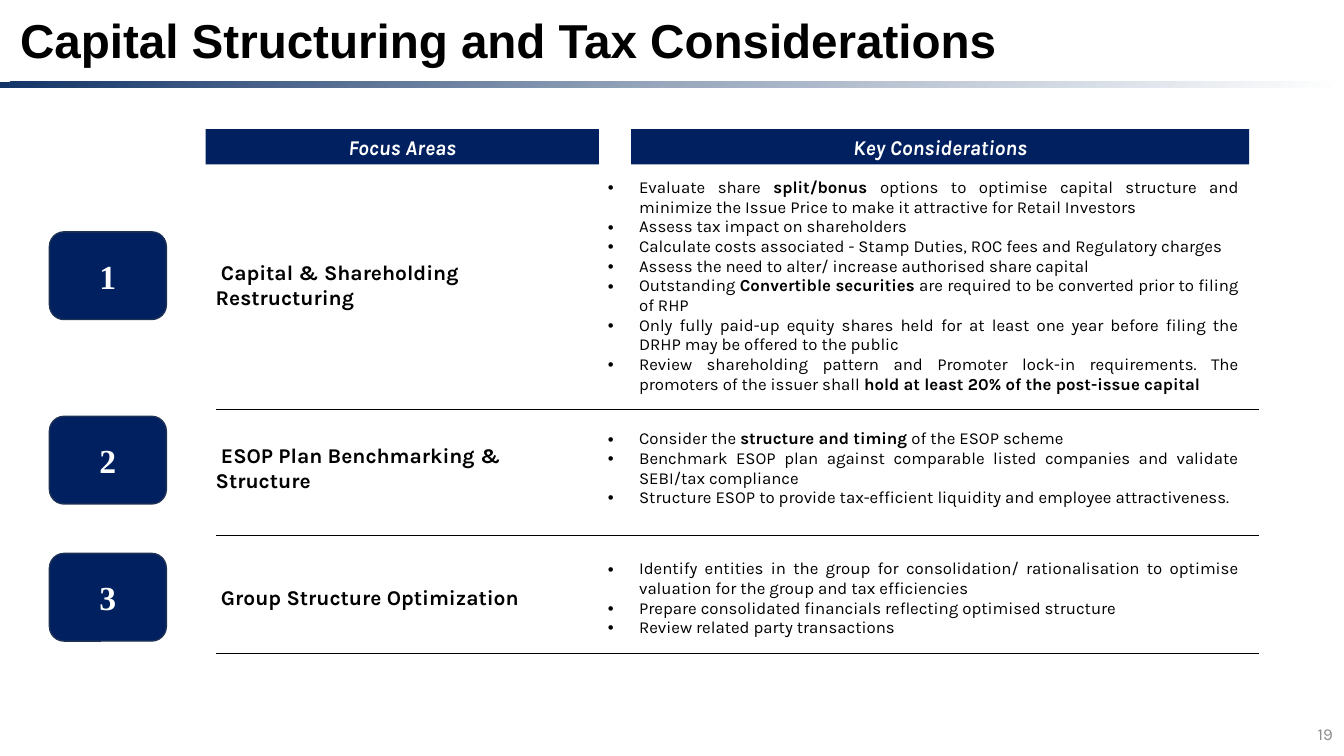
"""Builds the slide on capital structuring and tax considerations."""
from dataclasses import dataclass

from lxml import etree
from pptx import Presentation
from pptx import util as u
from pptx.dml.color import RGBColor
from pptx.enum import shapes, text
from pptx.oxml import parse_xml
from pptx.oxml.ns import nsdecls, qn

WIDTH, HEIGHT = u.Inches(13.33), u.Inches(7.5)
NAVY, WHITE, BLACK = "002060", "FFFFFF", "000000"
LEFT, CENTER, RIGHT, JUSTIFY = (
    text.PP_ALIGN.LEFT, text.PP_ALIGN.CENTER, text.PP_ALIGN.RIGHT, text.PP_ALIGN.JUSTIFY)
TOP, MIDDLE = text.MSO_ANCHOR.TOP, text.MSO_ANCHOR.MIDDLE
TABLE_LEFT, TABLE_TOP = 15.3, 22.53
TABLE_COLUMNS = (29.18, 48.46)
RULE_SHIFT = 0.75


@dataclass(frozen=True)
class Area:
    """Place and size in percent of the slide."""
    left: float
    top: float
    width: float
    height: float

    def lengths(self) -> tuple[int, int, int, int]:
        """Return the area as slide lengths."""
        return across(self.left), down(self.top), across(self.width), down(self.height)


@dataclass(frozen=True)
class Style:
    """Look of a span of text."""
    size: float
    color: str = BLACK
    font: str = "Karla"
    bold: bool = False
    italic: bool = False


@dataclass(frozen=True)
class Header:
    """Heading bar above a table column."""
    label: str
    left: float
    width: float


@dataclass(frozen=True)
class Focus:
    """Table row with its number badge and the rule below; asterisks enclose bold words."""
    name: str
    height: float
    badge_top: float
    rule_top: float
    points: tuple[str, ...]


TITLE = Style(34, font="Arial", bold=True)
BADGE = Style(24, WHITE, "Times New Roman", bold=True)
HEADING = Style(15, WHITE, bold=True, italic=True)
NAME = Style(15, bold=True)
POINT, STRONG_POINT = Style(12), Style(12, bold=True)
PAGE_NUMBER = Style(12, "8C8C8C")

HEADERS = (Header("Focus Areas", 15.3, 29.26), Header("Key Considerations", 46.96, 45.99))
FOCUSES = (
    Focus(" Capital & Shareholding Restructuring", 30.67, 30.67, 54.13, (
        "Evaluate share *split/bonus* options to optimise capital structure and minimize "
        "the Issue Price to make it attractive for Retail Investors",
        "Assess tax impact on shareholders ",
        "Calculate costs associated - Stamp Duties, ROC fees and Regulatory charges",
        "Assess the need to alter/ increase authorised share capital",
        "Outstanding *Convertible securities* are required to be converted prior to filing of RHP",
        "Only fully paid-up equity shares held for at least one year before filing the DRHP "
        "may be offered to the public",
        "Review shareholding pattern and Promoter lock-in requirements. The promoters of the "
        "issuer shall *hold at least 20% of the post-issue capital*")),
    Focus(" ESOP Plan Benchmarking & Structure", 17.6, 55.07, 70.8, (
        "Consider the *structure and timing* of the ESOP scheme",
        "Benchmark ESOP plan against comparable listed companies and validate "
        "SEBI/tax compliance",
        "Structure ESOP to provide tax-efficient liquidity and employee attractiveness. ")),
    Focus(" Group Structure Optimization", 16.8, 73.2, 86.4, (
        "Identify entities in the group for consolidation/ rationalisation to optimise "
        "valuation for the group and tax efficiencies",
        "Prepare consolidated financials reflecting optimised structure",
        "Review related party transactions")),
)


def across(percent: float) -> int:
    """Turn a share of the slide's width into a length."""
    return u.Emu(round(WIDTH * percent / 100))


def down(percent: float) -> int:
    """Turn a share of the slide's height into a length."""
    return u.Emu(round(HEIGHT * percent / 100))


def paint(color: str) -> RGBColor:
    """Turn a hex string into a colour."""
    return RGBColor.from_string(color)


def add_span(para, words: str, style: Style) -> None:
    """Add one run of styled text."""
    span = para.add_run()
    span.text = words
    font = span.font
    font.name, font.size = style.font, u.Pt(style.size)
    font.bold, font.italic = style.bold, style.italic
    font.color.rgb = paint(style.color)


def write(frame, words: str, style: Style, align=LEFT, anchor=MIDDLE) -> None:
    """Fill a text frame with a single paragraph."""
    frame.word_wrap = True
    frame.vertical_anchor = anchor
    para = frame.paragraphs[0]
    para.alignment = align
    add_span(para, words, style)


def write_points(frame, points: tuple[str, ...]) -> None:
    """Fill a text frame with justified bullet points."""
    for index, point in enumerate(points):
        para = frame.add_paragraph() if index else frame.paragraphs[0]
        para.alignment = JUSTIFY
        properties = para._p.get_or_add_pPr()
        properties.set("marL", str(u.Inches(0.31)))
        properties.set("indent", str(-u.Inches(0.31)))
        etree.SubElement(properties, qn("a:buFont")).set("typeface", "Arial")
        etree.SubElement(properties, qn("a:buChar")).set("char", "•")
        for part, words in enumerate(point.split("*")):
            if words:
                add_span(para, words, STRONG_POINT if part % 2 else POINT)


def add_block(page, kind, area: Area, line: str | None = None):
    """Add a navy shape, outlined when a line colour is given."""
    block = page.shapes.add_shape(kind, *area.lengths())
    block.shadow.inherit = False
    block.fill.solid()
    block.fill.fore_color.rgb = paint(NAVY)
    if line:
        block.line.color.rgb = paint(line)
        block.line.width = u.Pt(1)
    else:
        block.line.fill.background()
    return block


def add_title(page, words: str) -> None:
    """Place and fill the title placeholder."""
    title = page.shapes.title
    title.left, title.top, title.width, title.height = Area(0.75, 0.8, 83.8, 8.93).lengths()
    write(title.text_frame, words, TITLE, anchor=TOP)
    title.text_frame.auto_size = text.MSO_AUTO_SIZE.SHAPE_TO_FIT_TEXT


def add_gradient_bar(page) -> None:
    """Add the fading bar under the title."""
    bar = add_block(page, shapes.MSO_SHAPE.RECTANGLE, Area(0, 10.8, 100, 0.8))
    stops = "".join(
        f'<a:gs pos="{share * 1000}"><a:srgbClr val="{color}"/></a:gs>'
        for share, color in ((0, "133467"), (50, "99A8BD"), (100, WHITE)))
    properties = bar._element.spPr
    properties.replace(properties.find(qn("a:solidFill")), parse_xml(
        f'<a:gradFill {nsdecls("a")}><a:gsLst>{stops}</a:gsLst>'
        '<a:lin ang="2700000" scaled="0"/></a:gradFill>'))


def add_focus_table(page) -> None:
    """Add the table of focus areas and considerations."""
    area = Area(TABLE_LEFT, TABLE_TOP, sum(TABLE_COLUMNS), sum(f.height for f in FOCUSES))
    table = page.shapes.add_table(len(FOCUSES), len(TABLE_COLUMNS), *area.lengths()).table
    table.first_row = table.horz_banding = False
    for column, width in zip(table.columns, TABLE_COLUMNS):
        column.width = across(width)
    for row, focus in zip(table.rows, FOCUSES):
        row.height = down(focus.height)
        for cell in row.cells:
            cell.fill.background()
            cell.vertical_anchor = MIDDLE
        name, considerations = row.cells
        add_span(name.text_frame.paragraphs[0], focus.name, NAME)
        write_points(considerations.text_frame, focus.points)


def add_rule(page, top: float) -> None:
    """Add a thin rule below a table row."""
    left = TABLE_LEFT + RULE_SHIFT
    right = left + sum(TABLE_COLUMNS)
    rule = page.shapes.add_connector(
        shapes.MSO_CONNECTOR.STRAIGHT, across(left), down(top), across(right), down(top))
    rule.line.color.rgb = paint(BLACK)
    rule.line.width = u.Pt(0.5)
    etree.SubElement(rule._element.spPr, qn("a:effectLst"))


def main() -> None:
    """Build and save the deck."""
    deck = Presentation()
    deck.slide_width, deck.slide_height = WIDTH, HEIGHT
    page = deck.slides.add_slide(deck.slide_layouts[5])
    add_title(page, "Capital Structuring and Tax Considerations")
    add_gradient_bar(page)
    for number, focus in enumerate(FOCUSES, 1):
        area = Area(3.68, focus.badge_top, 8.7, 11.6)
        badge = add_block(page, shapes.MSO_SHAPE.ROUNDED_RECTANGLE, area, "1E3256")
        write(badge.text_frame, str(number), BADGE, CENTER)
    add_focus_table(page)
    for header in HEADERS:
        area = Area(header.left, 17.07, header.width, 4.67)
        bar = add_block(page, shapes.MSO_SHAPE.RECTANGLE, area)
        write(bar.text_frame, header.label, HEADING, CENTER)
    for focus in FOCUSES:
        add_rule(page, focus.rule_top)
    box = page.shapes.add_textbox(*Area(77.42, 94.4, 22.5, 5.33).lengths())
    write(box.text_frame, "19", PAGE_NUMBER, RIGHT)
    deck.save("out.pptx")


if __name__ == "__main__":
    main()
